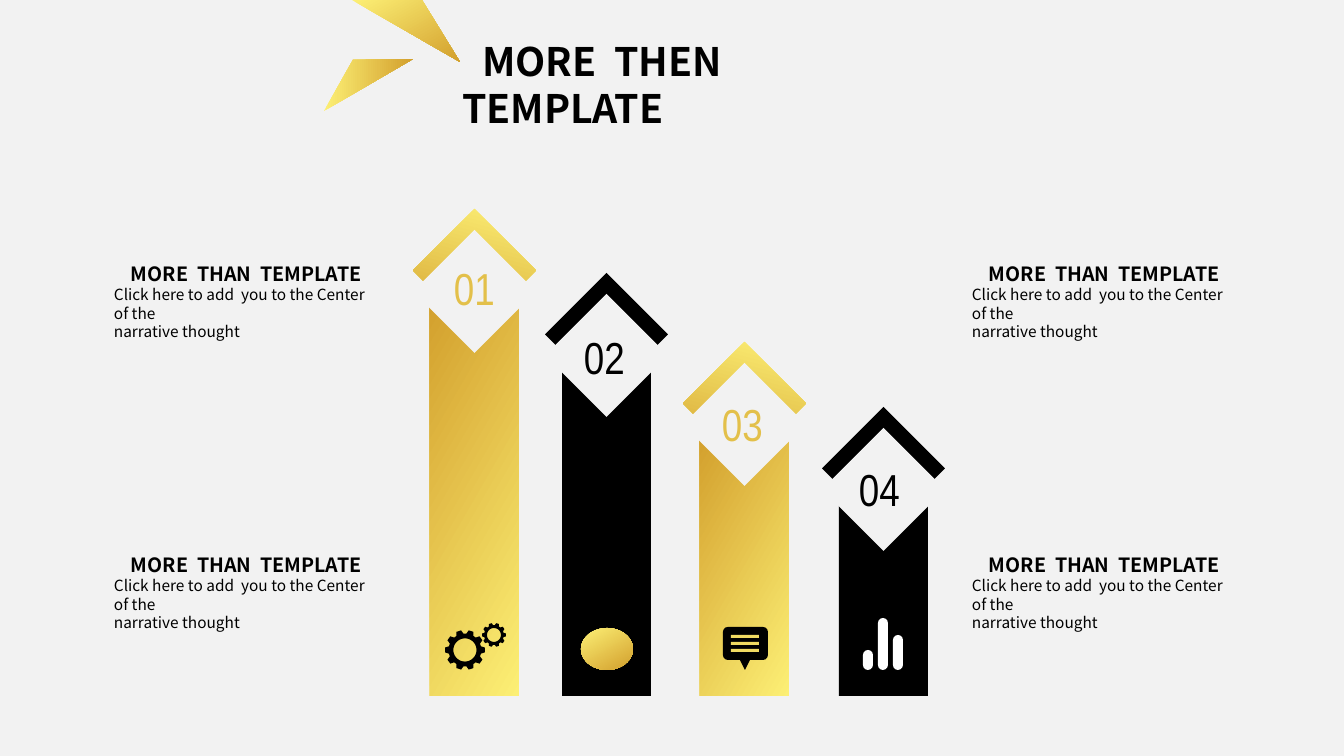
import math
from pptx import Presentation
from pptx import util as u
from pptx.dml.color import RGBColor
from pptx.enum import shapes, text

PX = u.Inches(1) / 100.8
BLACK = RGBColor(0x00, 0x00, 0x00)
WHITE = RGBColor(0xFF, 0xFF, 0xFF)
PAPER = RGBColor(0xF2, 0xF2, 0xF2)
LIGHT_GOLD = RGBColor(0xFC, 0xEF, 0x75)
DARK_GOLD = RGBColor(0xD3, 0xA0, 0x2D)
NUMBER_GOLD = RGBColor(0xE3, 0xC0, 0x4A)
LINE_GOLD = RGBColor(0xF0, 0xDA, 0x62)
SANS = "Noto Sans CJK JP"
PRESET = shapes.MSO_SHAPE


def write(box, words, size, font=SANS, color=BLACK, bold=False, indent=0):
    frame = box.text_frame
    frame.word_wrap = True
    frame.auto_size = text.MSO_AUTO_SIZE.NONE
    frame.vertical_anchor = text.MSO_ANCHOR.TOP
    para = frame.add_paragraph() if frame.text else frame.paragraphs[0]
    para.alignment = text.PP_ALIGN.LEFT
    para._p.get_or_add_pPr().set("indent", str(round(indent * PX)))
    span = para.add_run()
    span.text = words
    span.font.size = u.Pt(size)
    span.font.name = font
    span.font.bold = bold
    span.font.color.rgb = color


def paint(shape, fill):
    shape.shadow.inherit = False
    shape.line.fill.background()
    if isinstance(fill, int):
        shape.fill.gradient()
        shape.fill.gradient_angle = fill
        for stop, color in zip(shape.fill.gradient_stops, (LIGHT_GOLD, DARK_GOLD)):
            stop.color.rgb = color
    else:
        shape.fill.solid()
        shape.fill.fore_color.rgb = fill


deck = Presentation()
deck.slide_width, deck.slide_height = round(1344 * PX), round(756 * PX)
page = deck.slides.add_slide(deck.slide_layouts[5])
page.background.fill.solid()
page.background.fill.fore_color.rgb = PAPER

title = page.shapes.title
title.left, title.top, title.width, title.height = [round(n * PX) for n in (452, 32, 441, 110)]
write(title, "MORE  THEN  TEMPLATE", 28, bold=True, indent=20)

pieces = []
bars = [
    ("01", 430, 301, 444, 256, True),
    ("02", 562, 365, 574, 325, False),
    ("03", 700, 434, 712, 392, True),
    ("04", 839, 499, 849, 457, False),
]
for number, left, top, number_left, number_top, gold in bars:
    pieces += [
        (PRESET.RECTANGLE, left, top, 89, 696 - top, 0, 150 if gold else BLACK),
        (PRESET.RECTANGLE, left + 1, top - 74, 87, 87, 45, 300 if gold else BLACK),
        (PRESET.RECTANGLE, left + 1, top - 53, 87, 87, 45, PAPER),
    ]

pieces.append((PRESET.OVAL, 581, 628, 52, 42, 0, 300))
pieces.append((PRESET.ROUNDED_RECTANGLE, 723, 627, 45, 33, 0, BLACK))
for row in range(3):
    pieces.append((PRESET.RECTANGLE, 731, 635 + 7 * row, 28, 3, 0, LINE_GOLD))
for column, top in enumerate((650, 618, 635)):
    pieces.append((PRESET.ROUNDED_RECTANGLE, 863 + 15 * column, top, 10, 670 - top, 0, WHITE))

for preset, left, top, width, height, turn, fill in pieces:
    piece = page.shapes.add_shape(preset, *[round(n * PX) for n in (left, top, width, height)])
    piece.rotation = turn
    if preset == PRESET.ROUNDED_RECTANGLE:
        piece.adjustments[0] = 0.5 if fill == WHITE else 0.15
    paint(piece, fill)

outlines = [
    ([[(352, 0), (422, 0), (460, 62)]], 300),
    ([[(324, 111), (353, 60), (413, 59)]], 0),
    ([[(739, 658), (751, 658), (745, 670)]], BLACK),
]
for x, y, radius in ((465, 650, 20), (494, 635, 12)):
    teeth = [
        (36 * tooth + angle, radius * reach)
        for tooth in range(10)
        for angle, reach in ((-13, 0.82), (-7, 1), (7, 1), (13, 0.82))
    ]
    hole = [(angle, radius * 0.58) for angle in range(0, 360, 10)]
    gear = [
        [(x + r * math.cos(math.radians(a)), y + r * math.sin(math.radians(a))) for a, r in ring]
        for ring in (teeth, hole)
    ]
    outlines.append((gear, BLACK))

for rings, fill in outlines:
    rings = [[(round(x * PX), round(y * PX)) for x, y in ring] for ring in rings]
    builder = page.shapes.build_freeform(*rings[0][0])
    for ring in rings:
        builder.move_to(*ring[0])
        builder.add_line_segments(ring[1:], close=True)
    paint(builder.convert_to_shape(), fill)

for number, left, top, number_left, number_top, gold in bars:
    box = page.shapes.add_textbox(*[round(n * PX) for n in (number_left, number_top, 68, 64)])
    write(box, number, 32, font="Arial Narrow", color=NUMBER_GOLD if gold else BLACK)

for left in (104, 962):
    for top in (257, 548):
        box = page.shapes.add_textbox(*[round(n * PX) for n in (left, top, 281, 124)])
        write(box, "MORE  THAN  TEMPLATE", 14, bold=True, indent=17)
        write(box, "Click here to add  you to the Center of the", 11)
        write(box, "narrative thought", 11)

deck.save("out.pptx")
